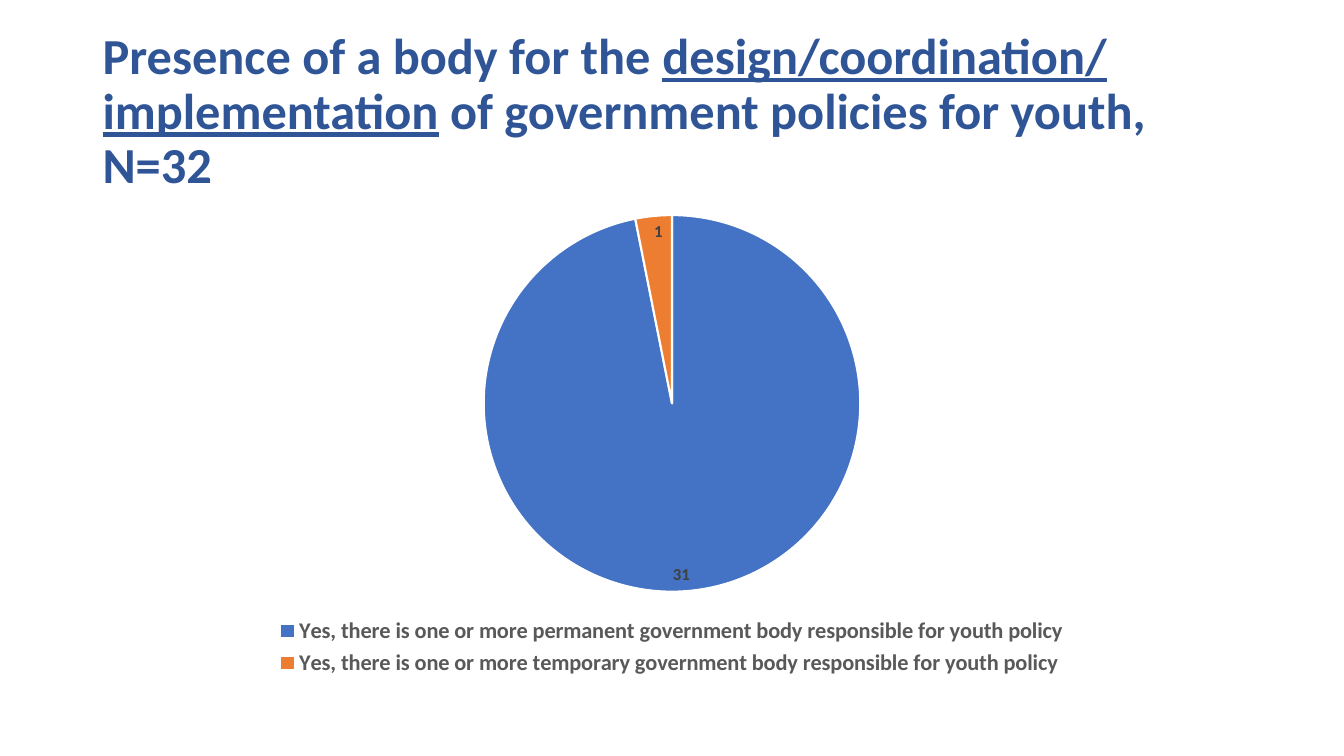
import pptx
import pptx.chart.data
import pptx.dml.color
import pptx.enum.chart
import pptx.enum.text
import pptx.util

Cm, Pt = pptx.util.Cm, pptx.util.Pt
COLORS = {
    "title": "2F5597",
    "permanent": "4472C4",
    "temporary": "ED7D31",
    "label": "404040",
    "legend": "595959",
    "edge": "FFFFFF",
}


def rgb(name):
    """Return the named colour."""
    return pptx.dml.color.RGBColor.from_string(COLORS[name])


def format_font(font, size, color, bold=True, name="Calibri"):
    """Apply the shared text style to a font."""
    font.name, font.size, font.bold = name, Pt(size), bold
    font.color.rgb = rgb(color)


def add_text(p, text, size=36, color="title", underline=False):
    """Append a formatted run to a paragraph."""
    r = p.add_run()
    r.text = text
    format_font(r.font, size, color)
    r.font.underline = underline


class Deck:
    """Hold the style and the current slide."""

    left, width = Cm(2.33), Cm(29.21)

    def __init__(self):
        """Start a widescreen deck with one title slide."""
        self.prs = pptx.Presentation()
        self.prs.slide_width, self.prs.slide_height = Cm(33.87), Cm(19.05)
        self.s = self.prs.slides.add_slide(self.prs.slide_layouts[5])

    def title(self, parts):
        """Fill the title with pairs of text and underline."""
        sp = self.s.shapes.title
        sp.left, sp.top, sp.width, sp.height = self.left, Cm(1.01), self.width, Cm(3.68)
        tf = sp.text_frame
        tf.word_wrap = True
        tf.auto_size = pptx.enum.text.MSO_AUTO_SIZE.NONE
        tf.vertical_anchor = pptx.enum.text.MSO_ANCHOR.MIDDLE
        p = tf.paragraphs[0]
        p.alignment = pptx.enum.text.PP_ALIGN.LEFT
        p.line_spacing = 0.9
        for text, underline in parts:
            add_text(p, text, underline=underline)

    def pie(self, slices):
        """Add a pie from rows of category, value and colour."""
        data = pptx.chart.data.CategoryChartData()
        data.categories = [category for category, _, _ in slices]
        data.add_series("Series 1", [value for _, value, _ in slices])
        chart = self.s.shapes.add_chart(
            pptx.enum.chart.XL_CHART_TYPE.PIE,
            self.left, Cm(5.07), self.width, Cm(12.09), data,
        ).chart
        chart.has_title = False
        chart.font.name, chart.font.size = "Calibri", Pt(10)
        chart.has_legend = True
        chart.legend.position = pptx.enum.chart.XL_LEGEND_POSITION.BOTTOM
        chart.legend.include_in_layout = False
        format_font(chart.legend.font, 16, "legend")
        plot = chart.plots[0]
        plot.vary_by_categories = True
        plot.has_data_labels = True
        labels = plot.data_labels
        labels.show_value, labels.show_percentage = True, False
        labels.position = pptx.enum.chart.XL_LABEL_POSITION.INSIDE_END
        format_font(labels.font, 12, "label")
        for i, (_, _, color) in enumerate(slices):
            point = plot.series[0].points[i].format
            point.fill.solid()
            point.fill.fore_color.rgb = rgb(color)
            point.line.color.rgb = rgb("edge")
            point.line.width = Pt(1.5)


def main():
    """Build and save the slide."""
    deck = Deck()
    deck.title([
        ("Presence of a body for the ", False),
        ("design/coordination/ implementation", True),
        (" of government policies for youth, N=32", False),
    ])
    answer = "Yes, there is one or more {} government body responsible for youth policy"
    deck.pie([
        (answer.format(kind), value, kind)
        for kind, value in (("permanent", 31), ("temporary", 1))
    ])
    deck.prs.save("out.pptx")


if __name__ == "__main__":
    main()
